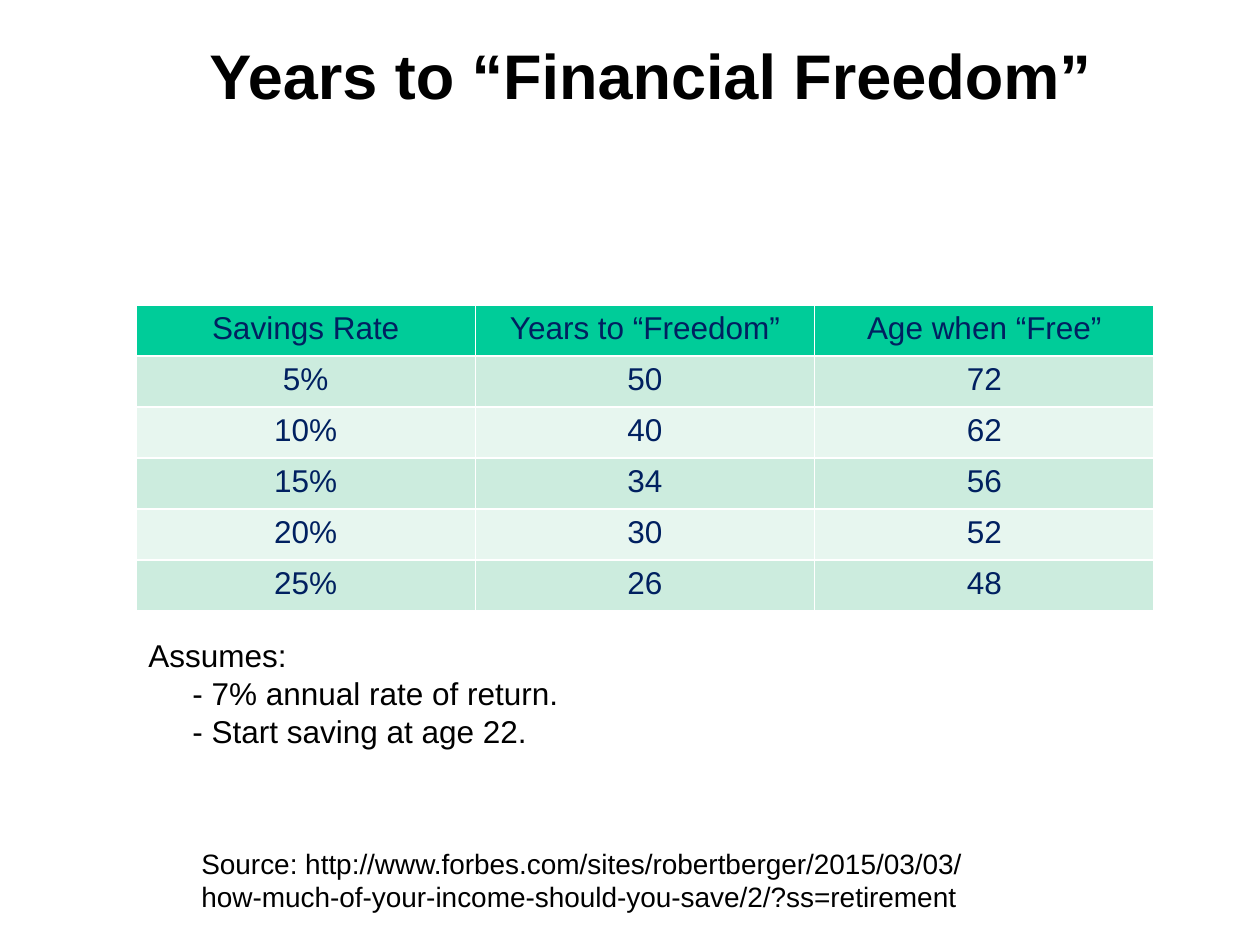
import pptx
import pptx.dml.color
import pptx.enum.text
import pptx.util

PX = 914400 // 126
BLACK, NAVY = "000000", "002060"
HEADER, BANDS = "00CC99", ("CCECDE", "E7F6EF")
ALIGN = pptx.enum.text.PP_ALIGN
ANCHOR = pptx.enum.text.MSO_ANCHOR


def rgb(value):
    return pptx.dml.color.RGBColor.from_string(value)


def write(p, text, size, color, bold=False, align=ALIGN.LEFT):
    p.alignment = align
    for i, line in enumerate(text.splitlines()):
        if i:
            p.add_line_break()
        r = p.add_run()
        r.text = line
        font = {"name": "Arial", "size": pptx.util.Pt(size), "bold": bold}
        for key, value in font.items():
            setattr(r.font, key, value)
        r.font.color.rgb = rgb(color)


prs = pptx.Presentation()
prs.slide_width, prs.slide_height = 1260 * PX, 945 * PX
s = prs.slides.add_slide(prs.slide_layouts[5])

# Title
sp = s.shapes.title
box = {"left": 73, "top": 32, "width": 1155, "height": 84}
for key, value in box.items():
    setattr(sp, key, value * PX)
sp.text_frame.vertical_anchor = ANCHOR.MIDDLE
write(sp.text_frame.paragraphs[0], "Years to “Financial Freedom”", 36, BLACK, True, ALIGN.CENTER)

# Savings table; the table style supplies the white rules
rows = [
    ("Savings Rate", "Years to “Freedom”", "Age when “Free”"),
    ("5%", "50", "72"),
    ("10%", "40", "62"),
    ("15%", "34", "56"),
    ("20%", "30", "52"),
    ("25%", "26", "48"),
]
table = s.shapes.add_table(len(rows), 3, 136 * PX, 305 * PX, 1018 * PX, 306 * PX).table
for i, row in enumerate(rows):
    for j, text in enumerate(row):
        cell = table.cell(i, j)
        cell.fill.solid()
        cell.fill.fore_color.rgb = rgb(BANDS[(i - 1) % 2] if i else HEADER)
        write(cell.text_frame.paragraphs[0], text, 18, NAVY, align=ALIGN.CENTER)

# Source
tf = s.shapes.add_textbox(189 * PX, 840 * PX, 1060 * PX, 118 * PX).text_frame
tf.word_wrap = True
source = """Source: http://www.forbes.com/sites/robertberger/2015/03/03/
how-much-of-your-income-should-you-save/2/?ss=retirement"""
write(tf.paragraphs[0], source, 16, BLACK)

# Assumptions, with the two items indented
tf = s.shapes.add_textbox(136 * PX, 630 * PX, 438 * PX, 127 * PX).text_frame
tf.word_wrap = False
write(tf.paragraphs[0], "Assumes:", 18, BLACK)
for text in ("- 7% annual rate of return.", "- Start saving at age 22."):
    p = tf.add_paragraph()
    p._p.get_or_add_pPr().set("marL", str(44 * PX))
    write(p, text, 18, BLACK)

prs.save("out.pptx")
